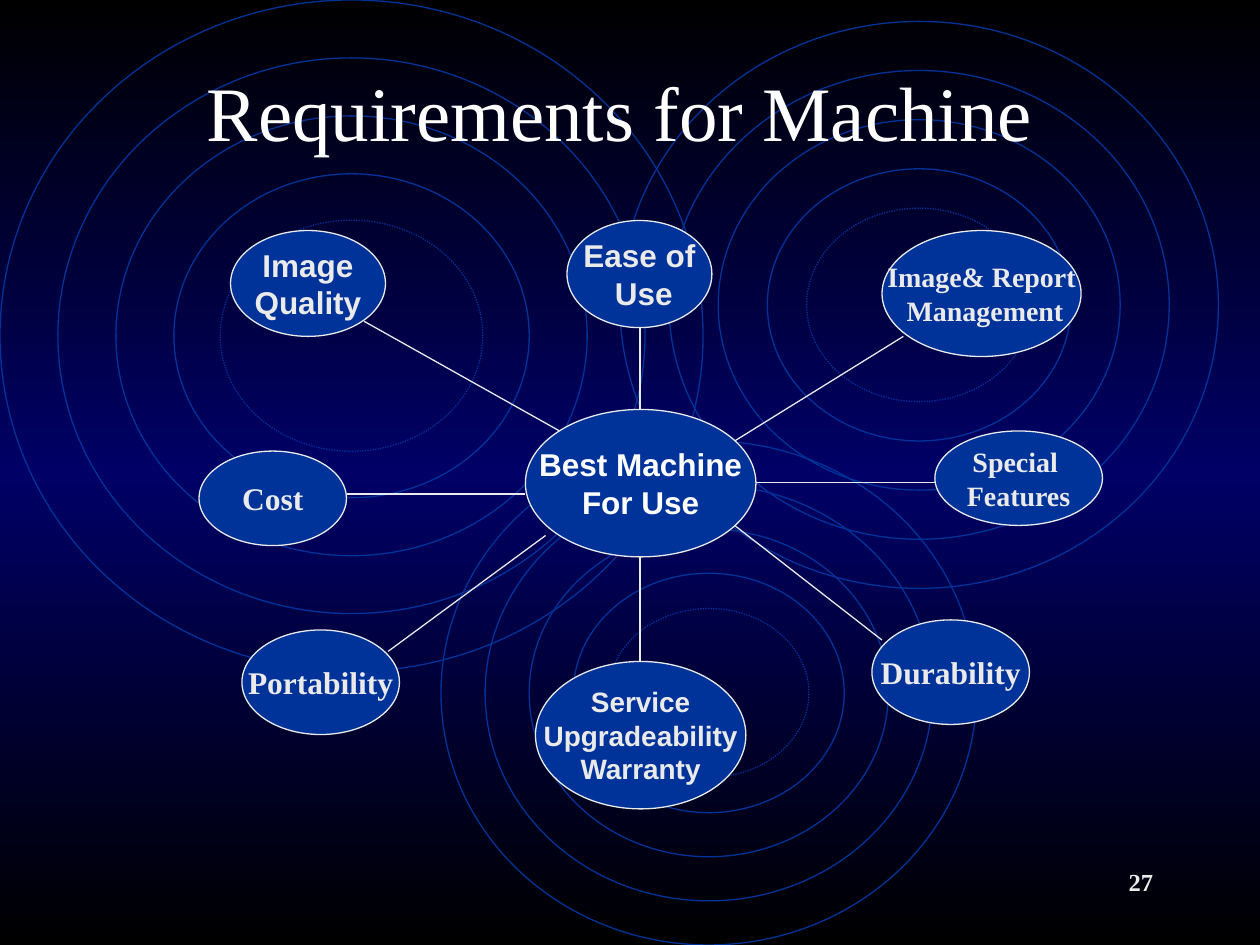
from copy import deepcopy
from dataclasses import dataclass

from pptx import Presentation
from pptx.dml.color import RGBColor
from pptx.enum.dml import MSO_LINE
from pptx.enum.shapes import MSO_CONNECTOR as CONNECTOR, MSO_SHAPE as SHAPE
from pptx.enum.text import MSO_ANCHOR as ANCHOR, PP_ALIGN as ALIGN
from pptx.oxml.ns import qn
from pptx.oxml.xmlchemy import OxmlElement
from pptx.util import Inches, Pt


@dataclass(frozen=True)
class Theme:
    black: str = "000000"
    navy: str = "000066"
    blue: str = "003399"
    white: str = "FFFFFF"
    pale: str = "EAEAEA"
    serif: str = "Times New Roman"
    sans: str = "Arial"
    title: int = 44
    large: int = 18
    medium: int = 16
    small: int = 14
    hairline: float = 0.75


class MindMap:
    def __init__(self, slide, theme):
        self.slide = slide
        self.theme = theme

    def background(self, colors):
        fill = self.slide.background.fill
        fill.gradient()
        fill.gradient_angle = 90
        stop_list = self.slide.element.find(".//" + qn("a:gsLst"))
        stop_list.append(deepcopy(stop_list[-1]))
        for index, (stop, color) in enumerate(zip(fill.gradient_stops, colors)):
            stop.position = index / (len(colors) - 1)
            stop.color.rgb = RGBColor.from_string(color)

    def outline(self, line, color):
        line.color.rgb = RGBColor.from_string(color)
        line.width = Pt(self.theme.hairline)

    def ellipse(self, box, line_color):
        oval = self.slide.shapes.add_shape(SHAPE.OVAL, *map(Inches, box))
        oval.shadow.inherit = False
        self.outline(oval.line, line_color)
        return oval

    def ripple(self, left, top, width, height, step):
        """Five nested rings, the innermost one dotted."""
        for factor in (0, 1, 2, 3, 3.8):
            inset = step * factor
            box = (left + inset, top + inset, width - 2 * inset, height - 2 * inset)
            ring = self.ellipse(box, self.theme.blue)
            ring.fill.background()
        ring.line.dash_style = MSO_LINE.ROUND_DOT

    def add_lines(self, frame, lines, size, font, color, bold=True, align=ALIGN.CENTER):
        for index, text in enumerate(lines):
            paragraph = frame.paragraphs[0] if index == 0 else frame.add_paragraph()
            paragraph.alignment = align
            run = paragraph.add_run()
            run.text = text
            run.font.size = Pt(size)
            run.font.name = font
            run.font.bold = bold
            run.font.color.rgb = RGBColor.from_string(color)

    def label(self, box, text, size, color, anchor, **style):
        frame = self.slide.shapes.add_textbox(*map(Inches, box)).text_frame
        frame.word_wrap = True
        frame.vertical_anchor = anchor
        self.add_lines(frame, [text], size, self.theme.serif, color, **style)

    def node(self, box, lines, size, font, color):
        oval = self.ellipse(box, self.theme.pale)
        oval.fill.solid()
        oval.fill.fore_color.rgb = RGBColor.from_string(self.theme.blue)
        frame = oval.text_frame
        frame.word_wrap = False
        frame.vertical_anchor = ANCHOR.MIDDLE
        self.add_lines(frame, lines, size, font, color)

    def spoke(self, start, end):
        line = self.slide.shapes.add_connector(
            CONNECTOR.STRAIGHT, *map(Inches, start + end))
        self.outline(line.line, self.theme.pale)
        line.element.spPr.append(OxmlElement("a:effectLst"))


def main():
    theme = Theme()
    deck = Presentation()
    deck.slide_width, deck.slide_height = Inches(10), Inches(7.5)
    mind_map = MindMap(deck.slides.add_slide(deck.slide_layouts[6]), theme)

    # Backdrop: gradient and ripples
    mind_map.background([theme.black, theme.navy, theme.black])
    mind_map.ripple(0, 0, 5.58, 5.33, 0.46)
    mind_map.ripple(3.5, 3.5, 4.25, 4, 0.35)
    mind_map.ripple(4.92, 0.17, 4.75, 4.5, 0.39)

    # Page number and title
    mind_map.label((7.17, 6.83, 2.08, 0.5), "27", theme.small, theme.pale,
                   ANCHOR.TOP, align=ALIGN.RIGHT)
    mind_map.label((0.67, 0.25, 8.5, 1.25), "Requirements for Machine", theme.title,
                   theme.white, ANCHOR.MIDDLE, bold=False)

    # Hub
    mind_map.node((4.17, 3.25, 1.83, 1.17), ["Best Machine", "For Use"],
                  theme.large, theme.sans, theme.white)

    # Requirements: ellipse, text lines, size, font, spoke ends
    requirements = [
        ((1.83, 1.83, 1.23, 0.84), ["Image", "Quality"],
         theme.large, theme.sans, (4.44, 3.42), (2.89, 2.55)),
        ((4.5, 1.75, 1.15, 0.85), ["Ease of", " Use"],
         theme.large, theme.sans, (5.08, 3.25), (5.08, 2.6)),
        ((4.25, 5.25, 1.67, 1.17), ["Service", "Upgradeability", "Warranty"],
         theme.medium, theme.sans, (5.08, 5.25), (5.08, 4.42)),
        ((1.92, 5, 1.25, 0.83), ["Portability"],
         theme.large, theme.serif, (3.08, 5.17), (4.33, 4.25)),
        ((6.92, 4.92, 1.25, 0.83), ["Durability"],
         theme.large, theme.serif, (5.83, 4.17), (7, 5.08)),
        ((7, 1.83, 1.58, 1), ["Image& Report", " Management"],
         theme.medium, theme.serif, (5.83, 3.5), (7.17, 2.67)),
        ((1.58, 3.58, 1.17, 0.75), ["Cost"],
         theme.large, theme.serif, (4.17, 3.92), (2.75, 3.92)),
        ((7.42, 3.42, 1.33, 0.75), ["Special ", "Features"],
         theme.medium, theme.serif, (6, 3.83), (7.42, 3.83)),
    ]
    for box, lines, size, font, start, end in requirements:
        mind_map.node(box, lines, size, font, theme.pale)
        mind_map.spoke(start, end)

    deck.save("out.pptx")


if __name__ == "__main__":
    main()
